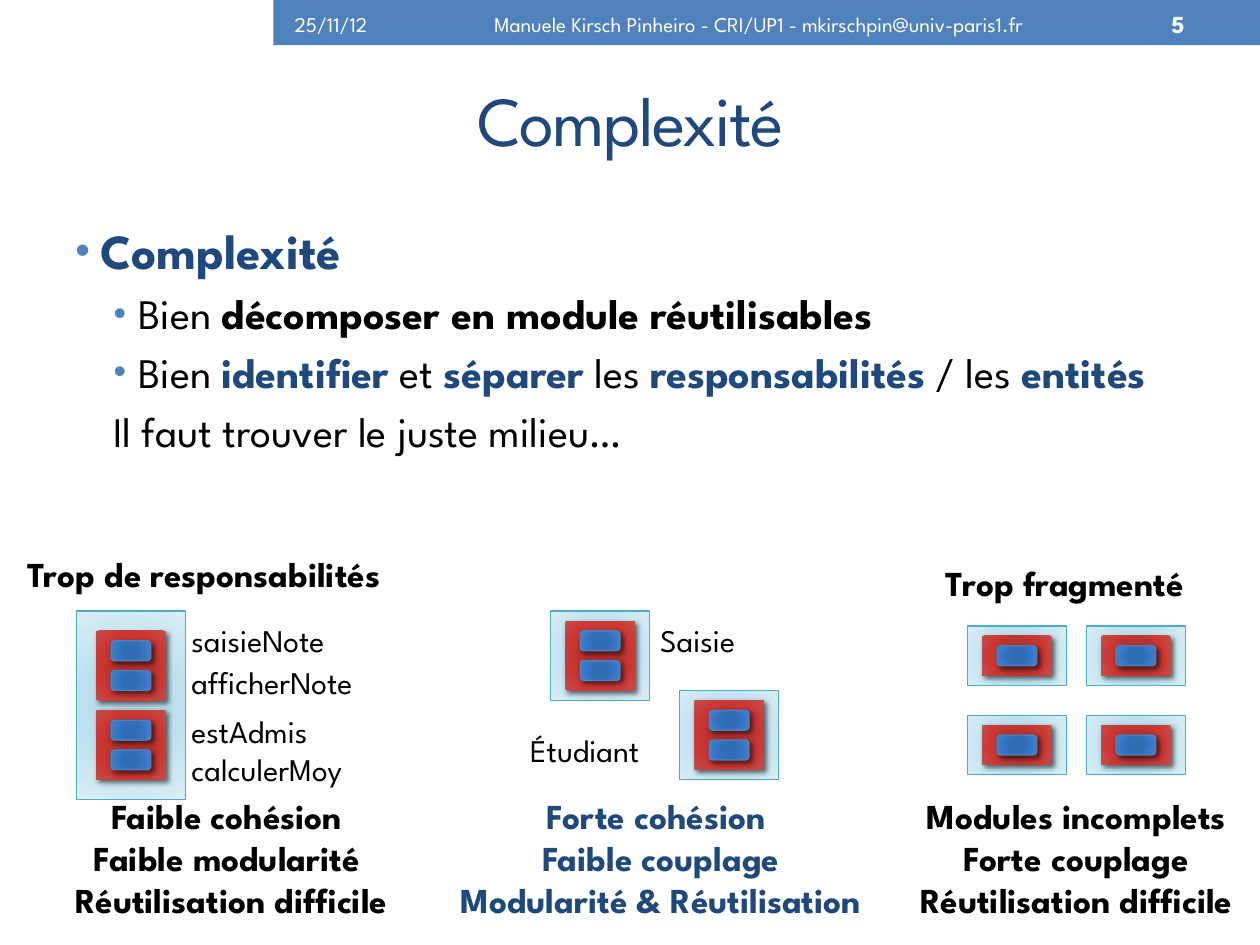
from lxml import etree
from pptx import Presentation
from pptx.dml.color import RGBColor
from pptx.enum.shapes import MSO_SHAPE as Shape
from pptx.enum.text import MSO_ANCHOR as Anchor, MSO_AUTO_SIZE as AutoSize, PP_ALIGN as Align
from pptx.oxml import parse_xml
from pptx.oxml.ns import nsdecls, qn
from pptx.util import Cm, Pt

FONT = "League Spartan"
NAVY = RGBColor(0x1F, 0x49, 0x7D)
BLUE = RGBColor(0x4F, 0x81, 0xBD)
TEAL = RGBColor(0x4B, 0xAC, 0xC6)
BLACK = RGBColor(0, 0, 0)
WHITE = RGBColor(255, 255, 255)


def stops(**colors):
    """Gradient stops from p<percent>=RGBColor arguments."""
    return [(int(name[1:]), color) for name, color in colors.items()]


PALE_FILL = stops(p0=RGBColor(0xAF, 0xD0, 0xDD), p45=RGBColor(0xBC, 0xE0, 0xEE),
                  p100=RGBColor(0xDA, 0xEE, 0xF6))
RED_FILL = stops(p0=RGBColor(0xBD, 0x2D, 0x29), p34=RGBColor(0xB8, 0x32, 0x2E),
                 p70=RGBColor(0xCD, 0x38, 0x34), p100=RGBColor(0xC0, 0x50, 0x4D))
BLUE_FILL = stops(p0=RGBColor(0x2C, 0x6C, 0xB9), p34=RGBColor(0x31, 0x6D, 0xB5),
                  p70=RGBColor(0x36, 0x79, 0xCA), p100=BLUE)


def add_run(paragraph, text, *, size=18, color=BLACK, bold=False, spacing=0):
    run = paragraph.add_run()
    run.text = text
    font = run.font
    font.name, font.size, font.bold = FONT, Pt(size), bold
    font.color.rgb = color
    if spacing:
        run._r.get_or_add_rPr().set("spc", str(spacing * 100))


def set_indent(paragraph, left, bullet):
    """Indent a paragraph by left cm, with a hanging bullet if asked."""
    properties = paragraph._p.get_or_add_pPr()
    properties.set("marL", str(Cm(left)))
    properties.set("indent", str(Cm(-0.5) if bullet else 0))
    if bullet:
        color = etree.SubElement(properties, qn("a:buClr"))
        etree.SubElement(color, qn("a:srgbClr"), val=str(BLUE))
        etree.SubElement(properties, qn("a:buSzPct"), val="85000")
        etree.SubElement(properties, qn("a:buFont"), typeface="Arial")
        etree.SubElement(properties, qn("a:buChar"), char="•")
    else:
        etree.SubElement(properties, qn("a:buNone"))


def set_radial_fill(shape, gradient):
    marks = "".join(f'<a:gs pos="{percent * 1000}"><a:srgbClr val="{color}"/></a:gs>'
                    for percent, color in gradient)
    fill = parse_xml(
        f'<a:gradFill {nsdecls("a")} rotWithShape="1"><a:gsLst>{marks}</a:gsLst>'
        '<a:path path="circle"><a:fillToRect l="100000" t="100000" r="100000" b="100000"/>'
        '</a:path></a:gradFill>')
    shape._element.spPr.find(qn("a:prstGeom")).addnext(fill)


def set_drop_shadow(shape):
    effects = shape._element.spPr.find(qn("a:effectLst"))
    effects.append(parse_xml(
        f'<a:outerShdw {nsdecls("a")} blurRad="{Pt(3)}" dist="{Pt(2)}" dir="2700000"'
        ' algn="tl" rotWithShape="0"><a:srgbClr val="000000"><a:alpha val="60000"/>'
        '</a:srgbClr></a:outerShdw>'))


class SlideBuilder:
    def __init__(self, presentation):
        self.slide = presentation.slides.add_slide(presentation.slide_layouts[5])
        self.shapes = self.slide.shapes

    def title(self, text):
        title = self.slide.shapes.title
        title.left, title.top, title.width, title.height = Cm(1.3), Cm(1.12), Cm(22.83), Cm(2.54)
        frame = title.text_frame
        frame.vertical_anchor = Anchor.MIDDLE
        frame.paragraphs[0].alignment = Align.CENTER
        add_run(frame.paragraphs[0], text, size=40, color=NAVY, spacing=-1)

    def band(self, left, top, width, height):
        band = self.shapes.add_shape(Shape.RECTANGLE, Cm(left), Cm(top), Cm(width), Cm(height))
        band.shadow.inherit = False
        band.fill.solid()
        band.fill.fore_color.rgb = BLUE
        band.line.fill.background()

    def text(self, left, top, width, height, *lines, align=Align.LEFT, middle=False,
             wrap=False, inset=True, **style):
        box = self.shapes.add_textbox(Cm(left), Cm(top), Cm(width), Cm(height))
        frame = box.text_frame
        frame.word_wrap = wrap
        frame.auto_size = AutoSize.NONE if wrap else AutoSize.SHAPE_TO_FIT_TEXT
        frame.vertical_anchor = Anchor.MIDDLE if middle else Anchor.TOP
        if not inset:
            frame.margin_left = frame.margin_top = frame.margin_right = frame.margin_bottom = 0
        for index, line in enumerate(lines):
            paragraph = frame.add_paragraph() if index else frame.paragraphs[0]
            paragraph.alignment = align
            add_run(paragraph, line, **style)

    def outline(self, left, top, width, height, items):
        """Items are (indent, bullet, size, runs); a run is (text, bold, color)."""
        box = self.shapes.add_textbox(Cm(left), Cm(top), Cm(width), Cm(height))
        frame = box.text_frame
        frame.word_wrap = True
        for index, (indent, bullet, size, runs) in enumerate(items):
            paragraph = frame.add_paragraph() if index else frame.paragraphs[0]
            set_indent(paragraph, indent, bullet)
            if index:
                paragraph.space_before = Pt(size * 0.2)
            for text, bold, color in runs:
                add_run(paragraph, text, size=size, bold=bold, color=color)

    def block(self, left, top, width, height, gradient, *, line=None, kind=Shape.RECTANGLE,
              shadow=True):
        block = self.shapes.add_shape(kind, Cm(left), Cm(top), Cm(width), Cm(height))
        block.shadow.inherit = False
        if line is None:
            block.line.fill.background()
        else:
            block.line.color.rgb = line
            block.line.width = Pt(0.75)
        set_radial_fill(block, gradient)
        if shadow:
            set_drop_shadow(block)

    def unit(self, left, top, functions):
        """Red class holding a column of blue functions."""
        self.block(left, top, 1.4, 0.6 * functions + 0.2, RED_FILL)
        for index in range(functions):
            self.block(left + 0.3, top + 0.2 + 0.6 * index, 0.8, 0.4, BLUE_FILL,
                       line=BLUE, kind=Shape.ROUNDED_RECTANGLE)

    def module(self, left, top, functions, *, units=1, margin_x=0.3, margin_y=0.2):
        """Pale module around a column of units, as one group."""
        self.shapes = self.slide.shapes.add_group_shape().shapes
        pitch = 0.6 * functions + 0.4
        height = pitch * units - 0.2 + 2 * margin_y
        self.block(left, top, 1.4 + 2 * margin_x, height, PALE_FILL, line=TEAL, shadow=False)
        for index in range(units):
            self.unit(left + margin_x, top + margin_y + index * (pitch + 0.0), functions)
        self.shapes = self.slide.shapes

    def label(self, left, top, width, text):
        self.text(left, top, width, 0.76, text, inset=False)


def main():
    presentation = Presentation()
    presentation.slide_width, presentation.slide_height = Cm(25.4), Cm(19.05)
    page = SlideBuilder(presentation)

    page.band(5.51, 0, 19.89, 0.91)
    header = dict(top=0.05, height=0.86, middle=True, wrap=True, color=WHITE)

    def heading(left, width, text, **style):
        options = {**header, **style}
        page.text(left, options.pop("top"), width, options.pop("height"), text, **options)

    heading(5.69, 2.79, "25/11/12", size=12)
    heading(8.1, 14.4, "Manuele Kirsch Pinheiro - CRI/UP1 - mkirschpin@univ-paris1.fr",
            size=12, align=Align.CENTER)
    heading(22.71, 1.42, "5", size=14, bold=True, align=Align.RIGHT)

    page.title("Complexité")
    page.outline(1.27, 4.32, 22.86, 13.54, [
        (0.5, True, 28, [("Complexité", True, NAVY)]),
        (1.27, True, 24, [("Bien ", False, BLACK),
                          ("décomposer en module réutilisables", True, BLACK)]),
        (1.27, True, 24, [("Bien ", False, BLACK), ("identifier", True, NAVY),
                          (" et ", False, BLACK), ("séparer", True, NAVY),
                          (" les ", False, BLACK), ("responsabilités", True, NAVY),
                          (" / les ", False, BLACK), ("entités", True, NAVY)]),
        (0.76, False, 24, [("Il faut trouver le juste milieu…", False, BLACK)]),
    ])

    page.module(1.54, 12.32, 2, units=2, margin_x=0.4, margin_y=0.4)
    for top, width, name in [(12.52, 3.15, "saisieNote"), (13.36, 3.91, "afficherNote"),
                             (14.35, 2.77, "estAdmis"), (15.11, 3.89, "calculerMoy")]:
        page.label(3.86, top, width, name)

    for row in range(2):
        for column in range(2):
            page.module(19.5 + 2.4 * column, 12.62 + 1.8 * row, 1)

    page.module(11.1, 12.32, 2)
    page.module(13.7, 13.92, 2)
    page.label(13.31, 12.52, 1.68, "Saisie")
    page.label(10.69, 14.73, 2.64, "Étudiant")

    page.text(0.3, 11.02, 8.38, 1.12, "Trop de responsabilités", size=20, bold=True)
    page.text(18.82, 11.2, 5.77, 1.12, "Trop fragmenté", size=20, bold=True)
    for left, width, color, verdict in [
        (1.07, 7.19, BLACK, ("Faible cohésion ", "Faible modularité ", "Réutilisation difficile")),
        (8.74, 9.17, NAVY, ("Forte cohésion ", "Faible couplage", "Modularité & Réutilisation")),
        (17.98, 7.44, BLACK, ("Modules incomplets", "Forte couplage", "Réutilisation difficile")),
    ]:
        page.text(left, 15.9, width, 2.82, *verdict, align=Align.CENTER,
                  size=20, bold=True, color=color)

    presentation.save("out.pptx")


if __name__ == "__main__":
    main()
